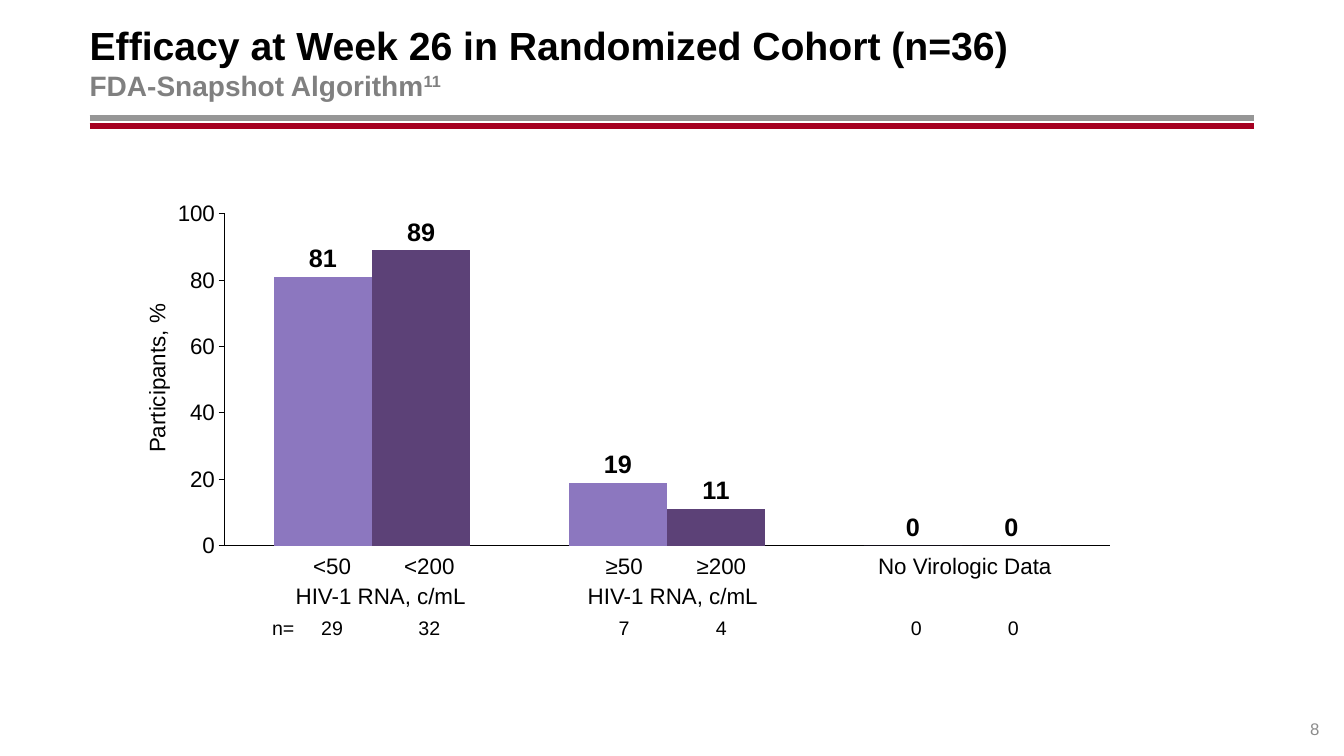
import pptx
import pptx.chart.data
import pptx.dml.color
import pptx.enum.chart
import pptx.enum.shapes
import pptx.enum.text
import pptx.oxml
import pptx.oxml.ns
import pptx.util

Cm = pptx.util.Cm
Pt = pptx.util.Pt
ALIGN = pptx.enum.text.PP_ALIGN
ANCHOR = pptx.enum.text.MSO_ANCHOR
FONT = "Arial"
COLORS = {
    "black": "000000",
    "gray": "808080",
    "page": "8C8C8C",
    "rule": "969696",
    "red": "A50021",
    "light": "8C77BF",
    "dark": "5C4177",
}
# Centre of the first bar, step between bars and step between groups, in cm
FIRST, STEP, GROUP = 8.37, 2.45, 7.36


def paint(name):
    return pptx.dml.color.RGBColor.from_string(COLORS[name])


def style(font, size, color="black", bold=False):
    font.name = FONT
    font.size = Pt(size)
    font.bold = bold
    font.color.rgb = paint(color)


def add_text(slide, text, left, top, wide, high, size, color="black",
             align=ALIGN.CENTER, anchor=ANCHOR.MIDDLE, wrap=False):
    box = slide.shapes.add_textbox(Cm(left), Cm(top), Cm(wide), Cm(high))
    frame = box.text_frame
    frame.margin_left = frame.margin_right = 0
    frame.margin_top = frame.margin_bottom = 0
    frame.word_wrap = wrap
    frame.vertical_anchor = anchor
    frame.text = text
    line = frame.paragraphs[0]
    line.alignment = align
    for run in line.runs:
        style(run.font, size, color)
    return box


def add_label(slide, text, mid, top, wide, size=16):
    """Put one line of text centred on mid."""
    high = 0.69 if size == 16 else 0.5
    box = add_text(slide, text, mid - wide / 2, top, wide, high, size)
    box.text_frame.auto_size = pptx.enum.text.MSO_AUTO_SIZE.SHAPE_TO_FIT_TEXT
    if size < 16:
        box.text_frame.paragraphs[0].line_spacing = 0.85
    return box


def add_rule(slide, top, color):
    rule = slide.shapes.add_connector(
        pptx.enum.shapes.MSO_CONNECTOR.STRAIGHT,
        Cm(2.26), Cm(top), Cm(31.6), Cm(top))
    rule.line.color.rgb = paint(color)
    rule.line.width = Pt(4.25)
    rule._element.spPr.append(pptx.oxml.parse_xml(
        f"<a:effectLst {pptx.oxml.ns.nsdecls('a')}/>"))


def add_title(slide):
    box = add_text(
        slide,
        "Efficacy at Week 26 in Randomized Cohort (n=36)\v"
        "FDA-Snapshot Algorithm",
        2.26, 0.46, 29.34, 2.18, 28, align=ALIGN.LEFT, wrap=True)
    line = box.text_frame.paragraphs[0]
    note = line.add_run()
    note.text = "11"
    head, sub = line.runs[:2]
    head.font.bold = True
    for run in (sub, note):
        style(run.font, 20, "gray", True)
    note._r.get_or_add_rPr().set("baseline", "30000")


def place_plot(chart, left, top, wide, high):
    """Fix the inner plot area as shares of the chart."""
    area = chart._chartSpace.chart.plotArea
    for old in area.findall(pptx.oxml.ns.qn("c:layout")):
        area.remove(old)
    sizes = {"x": left, "y": top, "w": wide, "h": high}
    parts = "".join(f'<c:{k} val="{v}"/>' for k, v in sizes.items())
    area.insert(0, pptx.oxml.parse_xml(
        f"<c:layout {pptx.oxml.ns.nsdecls('c')}><c:manualLayout>"
        '<c:layoutTarget val="inner"/>'
        '<c:xMode val="edge"/><c:yMode val="edge"/>'
        f"{parts}</c:manualLayout></c:layout>"))


def add_bars(slide):
    enum = pptx.enum.chart
    data = pptx.chart.data.CategoryChartData(number_format="#,##0")
    data.categories = ["1", "2", "3"]
    data.add_series("Series 1", (81, 19, 0))
    data.add_series("Series 2", (89, 11, 0))
    chart = slide.shapes.add_chart(
        enum.XL_CHART_TYPE.COLUMN_CLUSTERED,
        Cm(4.41), Cm(4.75), Cm(23.57), Cm(9.96), data).chart
    chart.has_legend = False
    chart.has_title = False
    style(chart.font, 10)
    place_plot(chart, 0.053, 0.064, 0.947, 0.84)

    base, scale = chart.category_axis, chart.value_axis
    for axis in (base, scale):
        axis.has_major_gridlines = False
        axis.minor_tick_mark = enum.XL_TICK_MARK.NONE
        axis.format.line.color.rgb = paint("black")
        axis.format.line.width = Pt(0.75)
    base.major_tick_mark = enum.XL_TICK_MARK.NONE
    base.tick_label_position = enum.XL_TICK_LABEL_POSITION.NONE
    scale.major_tick_mark = enum.XL_TICK_MARK.OUTSIDE
    scale.minimum_scale, scale.maximum_scale = 0, 100
    scale.major_unit = 20
    style(scale.tick_labels.font, 16)

    plot = chart.plots[0]
    plot.gap_width = 100
    plot.overlap = 0
    plot.vary_by_categories = False
    for bars, color in zip(plot.series, ("light", "dark")):
        bars.format.fill.solid()
        bars.format.fill.fore_color.rgb = paint(color)
        bars.invert_if_negative = False
        marks = bars.data_labels
        marks.show_value = True
        marks.position = enum.XL_LABEL_POSITION.OUTSIDE_END
        marks.number_format = "#,##0"
        marks.number_format_is_linked = False
        style(marks.font, 18, bold=True)


def add_groups(slide):
    """Write the labels and counts below each pair of bars."""
    groups = [
        (("<50", "<200"), "HIV-1 RNA, c/mL", ("29", "32")),
        (("≥50", "≥200"), "HIV-1 RNA, c/mL", ("7", "4")),
        ((), "No Virologic Data", ("0", "0")),
    ]
    add_label(slide, "n=", 7.14, 15.62, 0.8, 14)
    for i, (limits, name, counts) in enumerate(groups):
        left = FIRST + i * GROUP
        for j, limit in enumerate(limits):
            add_label(slide, limit, left + j * STEP, 13.9, 1.4)
        top = 14.67 if limits else 13.9
        add_label(slide, name, left + STEP / 2, top, 4.8)
        for j, count in enumerate(counts):
            add_label(slide, count, left + j * STEP, 15.62, 0.8, 14)


def main():
    deck = pptx.Presentation()
    deck.slide_width, deck.slide_height = Cm(33.87), Cm(19.05)
    slide = deck.slides.add_slide(deck.slide_layouts[6])
    add_rule(slide, 2.97, "rule")
    add_rule(slide, 3.18, "red")
    add_title(slide)
    add_text(slide, "8", 31.6, 17.6, 1.65, 1.02, 12, "page",
             ALIGN.RIGHT, ANCHOR.BOTTOM, True)
    add_bars(slide)
    add_groups(slide)
    add_label(slide, "Participants, %", 3.94, 9.19, 4.2).rotation = 270
    deck.save("out.pptx")


if __name__ == "__main__":
    main()
